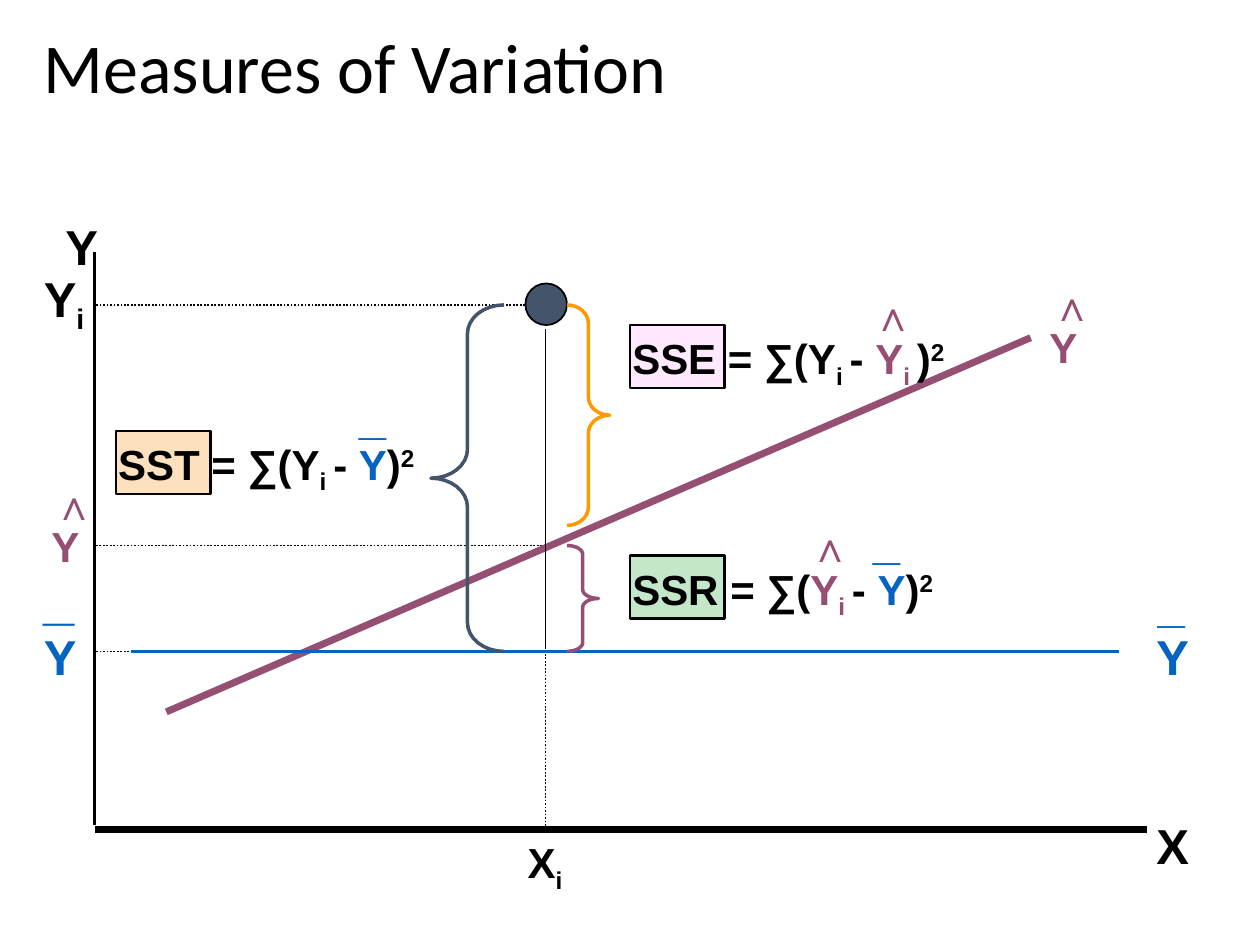
import dataclasses
import math

import lxml.etree
import pptx
import pptx.dml.color
import pptx.enum.dml
import pptx.enum.shapes
import pptx.enum.text
import pptx.oxml.ns
import pptx.util

PX = 9144


@dataclasses.dataclass(frozen=True)
class Theme:
    """Colours, fonts and type sizes."""
    ink: str = "000000"
    mean: str = "0563C1"
    fitted: str = "954F72"
    total: str = "44546A"
    error: str = "FF9900"
    sst: str = "FDE0BD"
    sse: str = "FFE9FF"
    ssr: str = "C4E6C9"
    heading_font: str = "Calibri"
    body_font: str = "Arial"
    heading: int = 40
    mark: int = 32
    label: int = 28
    formula: int = 24


@dataclasses.dataclass(frozen=True)
class Box:
    """A rectangle in px."""
    left: int
    top: int
    width: int
    height: int

    def inner(self, left, top, width, height):
        """Return a box placed relative to this one."""
        return Box(self.left + left, self.top + top, width, height)

    def emu(self):
        """Return left, top, width and height in EMU."""
        return [length * PX for length in dataclasses.astuple(self)]


THEME = Theme()
OBSERVED, FITTED, MEAN, POINT_X = 42, 233, 317, 358
Y, X = ("Y", THEME.ink, 0), ("X", THEME.ink, 0)
SUB_I = ("i", THEME.ink, -25)
Y_HAT, Y_BAR = ("Y", THEME.fitted, 0), ("Y", THEME.mean, 0)
HAT, BAR = ("∧", THEME.fitted, 0), ("_", THEME.mean, 0)
Y_I = [Y, ("i ", THEME.ink, -25)]
Y_HAT_I = [Y_HAT, ("i ", THEME.fitted, -25)]
MINUS = ("- ", THEME.ink, 0)
SQUARED = [(")", THEME.ink, 0), ("2", THEME.ink, 30)]


def rgb(colour):
    """Turn a hex string into a colour."""
    return pptx.dml.color.RGBColor.from_string(colour)


def add_text(page, box, runs, size, font=THEME.body_font, bold=True):
    """Write runs of (text, colour, baseline percent) and return the frame."""
    frame = page.shapes.add_textbox(*box.emu()).text_frame
    frame.word_wrap = True
    para = frame.paragraphs[0]
    for text, colour, baseline in runs:
        span = para.add_run()
        span.text = text
        span.font.name = font
        span.font.size = pptx.util.Pt(size)
        span.font.bold = bold
        span.font.color.rgb = rgb(colour)
        if baseline:
            span._r.get_or_add_rPr().set("baseline", str(baseline * 1000))
    return frame


def add_line(page, box, start, end, colour, weight, dotted=False):
    """Draw a straight line between two points of the box."""
    ends = [(box.left + x, box.top + y) for x, y in (start, end)]
    line = page.shapes.add_connector(
        pptx.enum.shapes.MSO_CONNECTOR.STRAIGHT,
        *[length * PX for point in ends for length in point])
    line.line.color.rgb = rgb(colour)
    line.line.width = pptx.util.Pt(weight)
    if dotted:
        line.line.dash_style = pptx.enum.dml.MSO_LINE.ROUND_DOT
    lxml.etree.SubElement(line._element.spPr, pptx.oxml.ns.qn("a:effectLst"))


def add_shape(page, box, kind, fill, weight):
    """Draw a filled preset shape with a dark outline."""
    shape = page.shapes.add_shape(kind, *box.emu())
    shape.shadow.inherit = False
    shape.fill.solid()
    shape.fill.fore_color.rgb = rgb(fill)
    shape.line.color.rgb = rgb(THEME.ink)
    shape.line.width = pptx.util.Pt(weight)


def add_brace(page, box, x, top, bottom, depth, colour):
    """Draw a brace whose tip lies depth px to the side of its ends."""
    middle, half, curve = (top + bottom) / 2, depth / 2, (bottom - top) / 12
    angles = [step * math.pi / 16 for step in range(9)]
    upper = [(x + half * math.sin(a), top + curve * (1 - math.cos(a)))
             for a in angles]
    upper += [(x + depth - half * math.cos(a),
               middle - curve * (1 - math.sin(a))) for a in angles]
    lower = [(px, 2 * middle - py) for px, py in reversed(upper[:-1])]
    points = [(round((box.left + px) * PX), round((box.top + py) * PX))
              for px, py in upper + lower]
    builder = page.shapes.build_freeform(*points[0])
    builder.add_line_segments(points[1:], close=False)
    brace = builder.convert_to_shape()
    brace.shadow.inherit = False
    brace.fill.background()
    brace.line.color.rgb = rgb(colour)
    brace.line.width = pptx.util.Pt(2)


def add_heading(page, box):
    """Write the slide title."""
    frame = add_text(page, box, [("Measures of Variation", THEME.ink, 0)],
                     THEME.heading, THEME.heading_font, False)
    frame.vertical_anchor = pptx.enum.text.MSO_ANCHOR.MIDDLE
    frame.paragraphs[0].line_spacing = 0.9


def add_plot(page, box):
    """Draw guides, axes, mean and regression lines, point and braces."""
    for level, reach in ((OBSERVED, 350), (FITTED, POINT_X), (MEAN, 33)):
        add_line(page, box, (reach, level), (0, level), THEME.ink, 1, True)
    add_line(page, box, (POINT_X, 319), (POINT_X, 456), THEME.ink, 1, True)
    add_line(page, box, (0, 0), (0, 455), THEME.ink, 2)
    add_line(page, box, (0, box.height), (box.width, box.height), THEME.ink, 4)
    add_line(page, box, (57, 365), (743, 68), THEME.fitted, 4)
    add_shape(page, box.inner(342, 25, 33, 33),
              pptx.enum.shapes.MSO_SHAPE.OVAL, THEME.total, 1)
    add_line(page, box, (POINT_X, 61), (POINT_X, 315), THEME.ink, 1)
    add_line(page, box, (29, MEAN), (813, MEAN), THEME.mean, 2)
    for x, top, bottom, depth, colour in (
            (325, OBSERVED, MEAN, -58, THEME.total),
            (375, OBSERVED, 217, 34, THEME.error),
            (375, FITTED, MEAN, 25, THEME.fitted)):
        add_brace(page, box, x, top, bottom, depth, colour)


def add_formula(page, box, fill, runs, hat=None, bar=None):
    """Write a sum of squares with its name on a swatch and its marks."""
    add_shape(page, box.inner(0, 0, 75, 50),
              pptx.enum.shapes.MSO_SHAPE.RECTANGLE, fill, 1.5)
    add_text(page, box.inner(-8, 1, box.width, 50), runs, THEME.formula)
    if hat is not None:
        add_text(page, box.inner(hat, -33, 118, 50), [HAT], THEME.formula)
    if bar is not None:
        add_text(page, box.inner(bar, -41, 66, 56), [BAR], THEME.label)


def add_labels(page, box):
    """Name the axes, the levels and the lines around the plot."""
    for left, top, runs, size in (
            (-33, -33, [Y], THEME.label),
            (-50, 8, [Y, SUB_I], THEME.label),
            (833, 442, [X], THEME.label),
            (334, 459, [X, SUB_I], THEME.formula),
            (-50, 292, [Y_BAR], THEME.label),
            (-50, 242, [BAR], THEME.mark),
            (833, 292, [Y_BAR], THEME.label),
            (834, 250, [BAR], THEME.label)):
        add_text(page, box.inner(left, top, 84, 56), runs, size)
    for left, top in ((-44, 208), (748, 50)):
        add_text(page, box.inner(left, top, 42, 50), [Y_HAT], THEME.formula)
        add_text(page, box.inner(left + 2, top - 33, 118, 50), [HAT],
                 THEME.formula)


def main():
    """Build and save the deck."""
    deck = pptx.Presentation()
    deck.slide_width, deck.slide_height = 1000 * PX, 750 * PX
    page = deck.slides.add_slide(deck.slide_layouts[6])
    plot = Box(75, 200, 835, 458)
    add_heading(page, Box(25, 0, 953, 113))
    add_plot(page, plot)
    add_formula(page, plot.inner(17, 142, 283, 50), THEME.sst,
                [("SST = ∑(", THEME.ink, 0), *Y_I, MINUS, Y_BAR, *SQUARED],
                bar=183)
    add_formula(page, plot.inner(425, 58, 283, 50), THEME.sse,
                [("SSE = ∑(", THEME.ink, 0), *Y_I, MINUS, *Y_HAT_I, *SQUARED],
                hat=183)
    add_formula(page, plot.inner(425, 241, 366, 50), THEME.ssr,
                [("SSR = ∑(", THEME.ink, 0), *Y_HAT_I, MINUS, Y_BAR, *SQUARED],
                hat=133, bar=183)
    add_labels(page, plot)
    deck.save("out.pptx")


if __name__ == "__main__":
    main()
